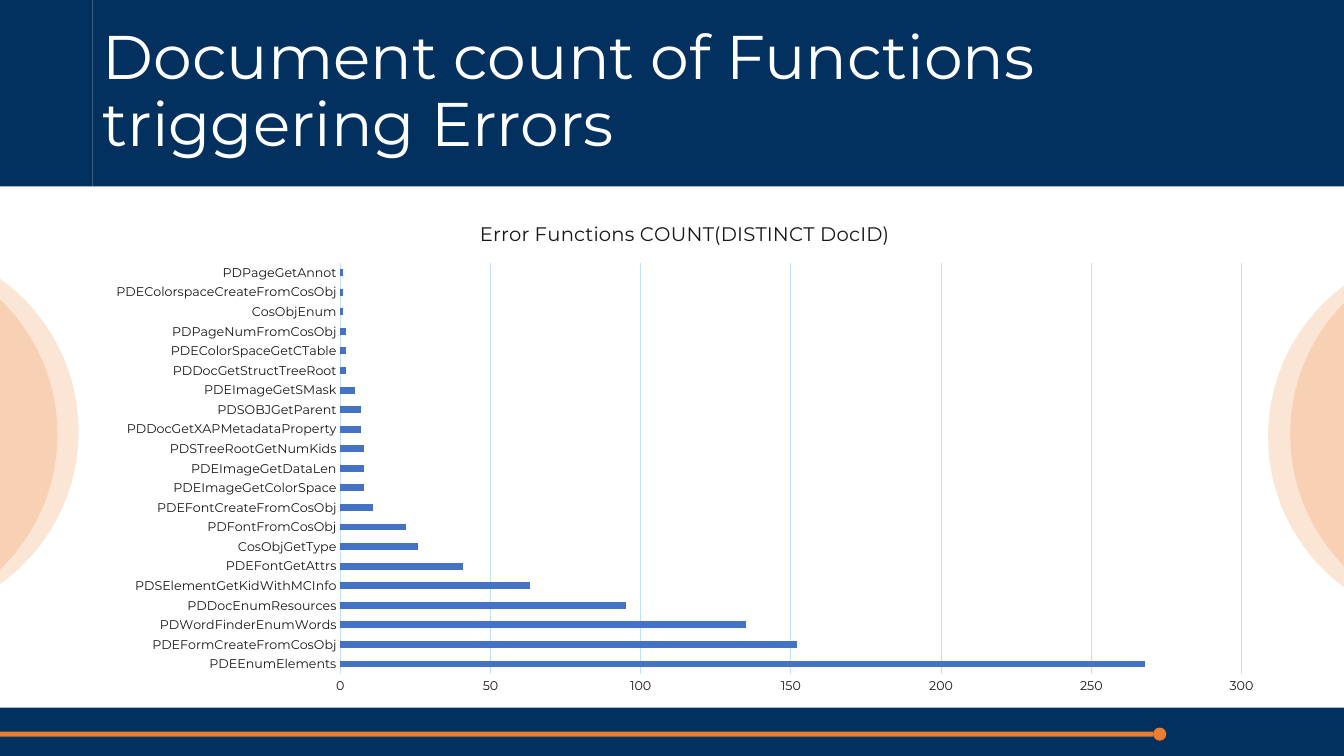
"""Build a slide with a bar chart of the functions that trigger errors."""
import dataclasses
import typing

import lxml.etree
import pptx
import pptx.chart.data
import pptx.dml.color
import pptx.enum.chart
import pptx.enum.shapes
import pptx.enum.text
import pptx.oxml.ns
import pptx.util

Pt = pptx.util.Pt
RGB = pptx.dml.color.RGBColor
MSO_SHAPE = pptx.enum.shapes.MSO_SHAPE
XL = pptx.enum.chart


@dataclasses.dataclass(frozen=True)
class Theme:
    font: str = "Montserrat"
    navy: RGB = RGB(0x02, 0x31, 0x60)
    orange: RGB = RGB(0xED, 0x7D, 0x31)
    bar: RGB = RGB(0x44, 0x72, 0xC4)
    grid: RGB = RGB(0xC2, 0xE0, 0xFE)
    ink: RGB = RGB(0x18, 0x17, 0x17)
    white: RGB = RGB(0xFF, 0xFF, 0xFF)
    title_size: float = 44
    chart_title_size: float = 14
    chart_size: float = 10
    axis_size: float = 9


class Decor(typing.NamedTuple):
    kind: MSO_SHAPE
    left: float
    top: float
    width: float
    height: float
    color: RGB
    opacity: int = 100


THEME = Theme()
WIDTH, HEIGHT = 960, 540
MARGIN, HEADER = 66.24, 133.2
FOOTER_TOP = 505.44
CIRCLE = 267.84
CIRCLE_PLACES = [(921.6, 176.4), (905.76, 177.84), (-211.68, 174.24), (-226.8, 176.4)]

DECOR = [
    Decor(MSO_SHAPE.RECTANGLE, 0, 0, MARGIN, HEADER, THEME.navy),
    *(Decor(MSO_SHAPE.OVAL, x, y, CIRCLE, CIRCLE, THEME.orange, 20)
      for x, y in CIRCLE_PLACES),
    Decor(MSO_SHAPE.RECTANGLE, 0, FOOTER_TOP, WIDTH, HEIGHT - FOOTER_TOP, THEME.navy),
    Decor(MSO_SHAPE.RECTANGLE, 0, 522.6, 823.68, 3.6, THEME.orange),
    Decor(MSO_SHAPE.OVAL, 823.68, 519.7, 9.4, 9.4, THEME.orange),
]

COUNTS = {
    "PDEEnumElements": 268,
    "PDEFormCreateFromCosObj": 152,
    "PDWordFinderEnumWords": 135,
    "PDDocEnumResources": 95,
    "PDSElementGetKidWithMCInfo": 63,
    "PDEFontGetAttrs": 41,
    "CosObjGetType": 26,
    "PDFontFromCosObj": 22,
    "PDEFontCreateFromCosObj": 11,
    "PDEImageGetColorSpace": 8,
    "PDEImageGetDataLen": 8,
    "PDSTreeRootGetNumKids": 8,
    "PDDocGetXAPMetadataProperty": 7,
    "PDSOBJGetParent": 7,
    "PDEImageGetSMask": 5,
    "PDDocGetStructTreeRoot": 2,
    "PDEColorSpaceGetCTable": 2,
    "PDPageNumFromCosObj": 2,
    "CosObjEnum": 1,
    "PDEColorspaceCreateFromCosObj": 1,
    "PDPageGetAnnot": 1,
}


def set_font(font: typing.Any, size: float, color: RGB) -> None:
    font.name = THEME.font
    font.size = Pt(size)
    font.bold = False
    font.color.rgb = color


def set_line(line: typing.Any, color: RGB) -> None:
    line.color.rgb = color
    line.width = Pt(0.75)


def add_decor(s: typing.Any, decor: Decor) -> None:
    sp = s.shapes.add_shape(decor.kind, Pt(decor.left), Pt(decor.top),
                            Pt(decor.width), Pt(decor.height))
    sp.shadow.inherit = False
    sp.line.fill.background()
    sp.fill.solid()
    sp.fill.fore_color.rgb = decor.color
    if decor.opacity < 100:
        qn = pptx.oxml.ns.qn
        color = sp.fill._xPr.find(qn("a:solidFill")).find(qn("a:srgbClr"))
        alpha = lxml.etree.SubElement(color, qn("a:alpha"))
        alpha.set("val", str(decor.opacity * 1000))


def format_title(s: typing.Any, text: str) -> None:
    sp = s.shapes.title
    sp.left, sp.top = Pt(MARGIN), Pt(0)
    sp.width, sp.height = Pt(WIDTH - MARGIN), Pt(HEADER)
    sp.fill.solid()
    sp.fill.fore_color.rgb = THEME.navy
    tf = sp.text_frame
    tf.text = text
    tf.word_wrap = True
    tf.auto_size = pptx.enum.text.MSO_AUTO_SIZE.NONE
    tf.vertical_anchor = pptx.enum.text.MSO_ANCHOR.MIDDLE
    p = tf.paragraphs[0]
    p.alignment = pptx.enum.text.PP_ALIGN.LEFT
    p.line_spacing = 0.9
    set_font(p.font, THEME.title_size, THEME.white)


def add_count_chart(s: typing.Any, title: str, counts: dict[str, int]) -> None:
    data = pptx.chart.data.CategoryChartData()
    data.categories = list(counts)
    data.add_series("Series 1", list(counts.values()))
    chart = s.shapes.add_chart(XL.XL_CHART_TYPE.BAR_CLUSTERED, Pt(MARGIN), Pt(144),
                               Pt(846), Pt(358.56), data).chart
    set_font(chart.font, THEME.chart_size, THEME.ink)
    chart.has_legend = False
    chart.has_title = True
    tf = chart.chart_title.text_frame
    tf.text = title
    set_font(tf.paragraphs[0].font, THEME.chart_title_size, THEME.ink)

    plot = chart.plots[0]
    plot.gap_width = 182
    plot.vary_by_categories = False
    fill = plot.series[0].format.fill
    fill.solid()
    fill.fore_color.rgb = THEME.bar

    for axis in (chart.category_axis, chart.value_axis):
        axis.major_tick_mark = axis.minor_tick_mark = XL.XL_TICK_MARK.NONE
        set_font(axis.tick_labels.font, THEME.axis_size, THEME.ink)
    chart.category_axis.has_major_gridlines = False
    set_line(chart.category_axis.format.line, THEME.grid)
    values = chart.value_axis
    values.minimum_scale, values.maximum_scale, values.major_unit = 0, 300, 50
    values.format.line.fill.background()
    values.has_major_gridlines = True
    set_line(values.major_gridlines.format.line, THEME.grid)


def main() -> None:
    prs = pptx.Presentation()
    prs.slide_width, prs.slide_height = Pt(WIDTH), Pt(HEIGHT)
    s = prs.slides.add_slide(prs.slide_layouts.get_by_name("Title Only"))
    for decor in DECOR:
        add_decor(s, decor)
    format_title(s, "Document count of Functions triggering Errors")
    add_count_chart(s, "Error Functions COUNT(DISTINCT DocID)", COUNTS)
    prs.save("out.pptx")


if __name__ == "__main__":
    main()
